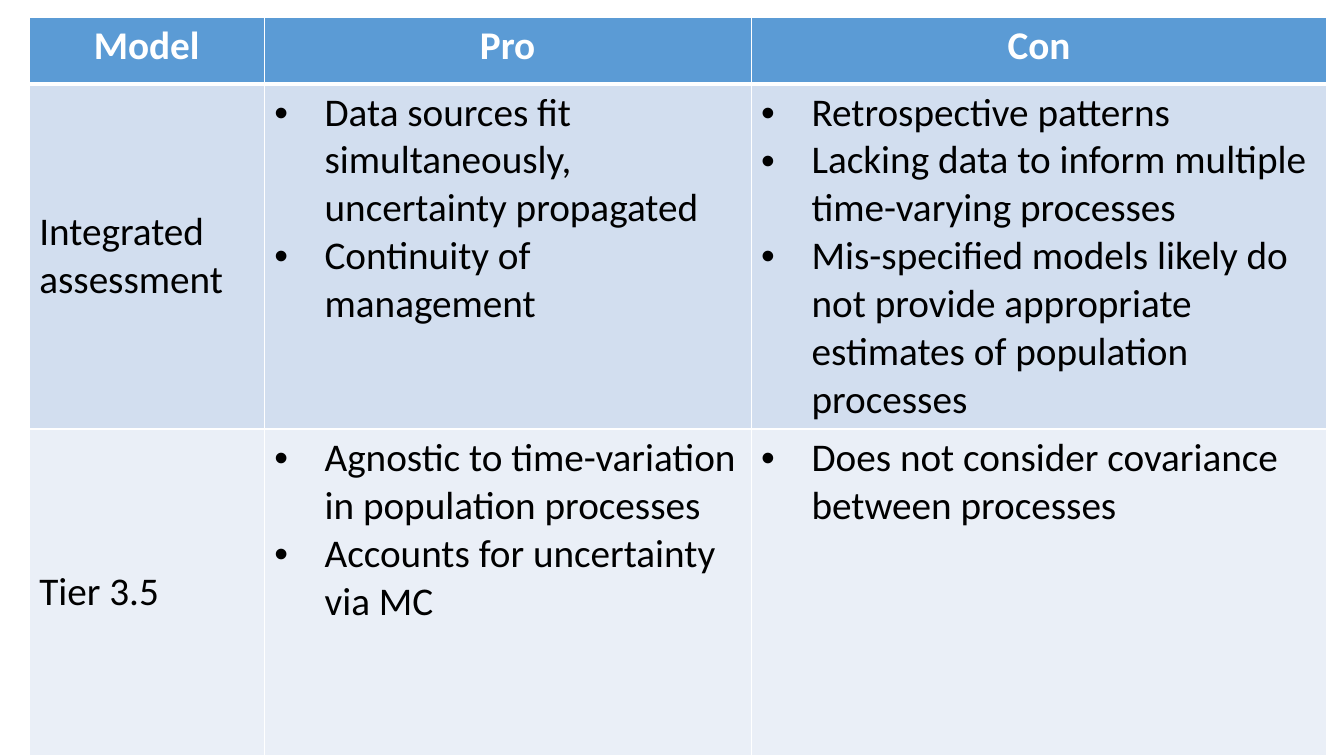
import lxml.etree
import pptx
import pptx.dml.color
import pptx.enum.text
import pptx.oxml.ns
import pptx.util

Inches = pptx.util.Inches
Pt = pptx.util.Pt

COLUMN_WIDTHS = [2.33, 4.83, 5.71]
ROW_HEIGHTS = [0.66, 3.24, 3.24]
ROW_FILLS = ["5B9BD5", "D2DEEF", "EAEFF7"]
HEADINGS = ["Model", "Pro", "Con"]
MODELS = [
    ("Integrated assessment",
     ["Data sources fit simultaneously, uncertainty propagated",
      "Continuity of management"],
     ["Retrospective patterns",
      "Lacking data to inform multiple time-varying processes",
      "Mis-specified models likely do not provide appropriate "
      "estimates of population processes"]),
    ("Tier 3.5",
     ["Agnostic to time-variation in population processes",
      "Accounts for uncertainty via MC"],
     ["Does not consider covariance between processes"]),
]


def color(value):
    return pptx.dml.color.RGBColor.from_string(value)


def add_element(parent, tag, **attributes):
    element = lxml.etree.SubElement(parent, pptx.oxml.ns.qn(tag))
    for name, value in attributes.items():
        element.set(name, str(value))
    return element


def add_bullet(paragraph):
    properties = paragraph._p.get_or_add_pPr()
    properties.set("marL", str(Inches(0.5)))
    properties.set("indent", str(Inches(-0.5)))
    add_element(properties, "a:buFont", typeface="Arial")
    add_element(properties, "a:buChar", char="•")


def set_borders(cell, bottom_width):
    properties = cell._tc.get_or_add_tcPr()
    for side, width in (("L", 1), ("R", 1), ("T", 1), ("B", bottom_width)):
        line = add_element(properties, f"a:ln{side}", w=Pt(width))
        fill = add_element(line, "a:solidFill")
        add_element(fill, "a:srgbClr", val="FFFFFF")


def fill_cell(cell, lines, fill, bottom_width=1, header=False, bullets=False):
    set_borders(cell, bottom_width)
    cell.fill.solid()
    cell.fill.fore_color.rgb = color(fill)
    cell.text = "\n".join(lines)
    for paragraph in cell.text_frame.paragraphs:
        if bullets:
            add_bullet(paragraph)
        if header:
            paragraph.alignment = pptx.enum.text.PP_ALIGN.CENTER
        paragraph.font.name = "Calibri"
        paragraph.font.size = Pt(28)
        paragraph.font.bold = header
        paragraph.font.color.rgb = color("FFFFFF" if header else "000000")


def add_comparison_table(slide):
    table = slide.shapes.add_table(
        len(ROW_HEIGHTS), len(COLUMN_WIDTHS), Inches(0.29), Inches(0.17),
        Inches(sum(COLUMN_WIDTHS)), Inches(sum(ROW_HEIGHTS))).table
    for column, width in zip(table.columns, COLUMN_WIDTHS):
        column.width = Inches(width)
    for row, height in zip(table.rows, ROW_HEIGHTS):
        row.height = Inches(height)

    # Header row
    for index, heading in enumerate(HEADINGS):
        fill_cell(table.cell(0, index), [heading], ROW_FILLS[0],
                  bottom_width=3, header=True)

    # One row per model
    for row, (model, pros, cons) in enumerate(MODELS, start=1):
        name_cell = table.cell(row, 0)
        fill_cell(name_cell, [model], ROW_FILLS[row])
        name_cell.vertical_anchor = pptx.enum.text.MSO_ANCHOR.MIDDLE
        for column, points in enumerate((pros, cons), start=1):
            fill_cell(table.cell(row, column), points, ROW_FILLS[row],
                      bullets=True)

    # Heavier rule under the header, shared with the first model row
    for cell in table.rows[1].cells:
        top = cell._tc.tcPr.find(pptx.oxml.ns.qn("a:lnT"))
        top.set("w", str(Pt(3)))


def main():
    presentation = pptx.Presentation()
    presentation.slide_width = Inches(13.33)
    presentation.slide_height = Inches(7.5)
    slide = presentation.slides.add_slide(presentation.slide_layouts[6])
    add_comparison_table(slide)
    presentation.save("out.pptx")


if __name__ == "__main__":
    main()
